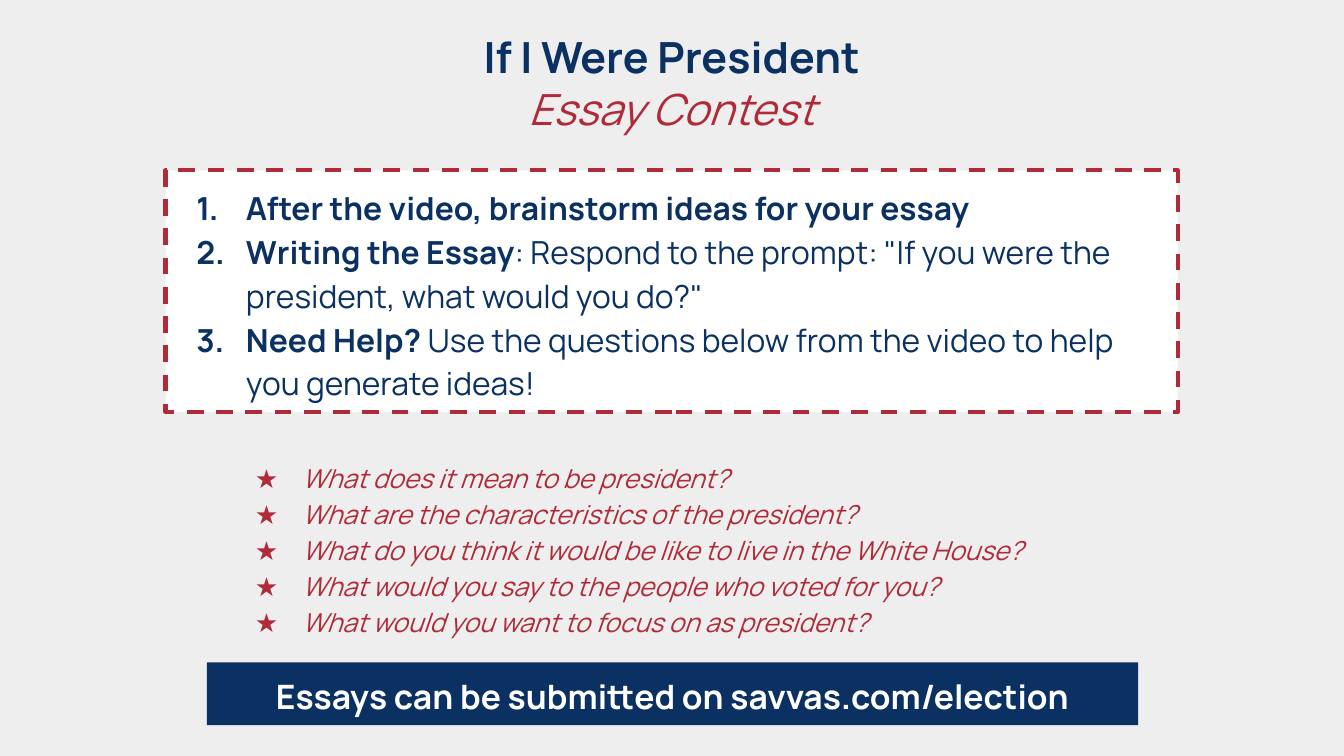
"""Build the essay contest slide."""
from lxml import etree
from pptx import Presentation
from pptx import util as u
from pptx.dml.color import RGBColor
from pptx.enum import dml, shapes, text
from pptx.oxml import ns

NAVY = RGBColor(0x0A, 0x31, 0x61)
RED = RGBColor(0xAF, 0x2B, 0x39)
WHITE = RGBColor(0xFF, 0xFF, 0xFF)
GREY = RGBColor(0xEE, 0xEE, 0xEE)
FONT = "Manrope"

TITLE = [
    [("If I Were President", NAVY, "b")],
    [("Essay Contest", RED, "i")],
]
STEPS = [
    [("After the video, brainstorm ideas for your essay", NAVY, "b")],
    [("Writing the Essay", NAVY, "b"),
     (': Respond to the prompt: "If you were the president, what would you do?"', NAVY, "")],
    [("Need Help?", NAVY, "b"),
     (" Use the questions below from the video to help you generate ideas!", NAVY, "")],
]
QUESTIONS = [[(question, RED, "i")] for question in (
    "What does it mean to be president?",
    "What are the characteristics of the president?",
    "What do you think it would be like to live in the White House?",
    "What would you say to the people who voted for you?",
    "What would you want to focus on as president?",
)]
SUBMIT = [[("Essays can be submitted on savvas.com/election", WHITE, "b")]]

NUMBER = ("buAutoNum", {"type": "arabicPeriod"}, NAVY, 0.94)
STAR = ("buChar", {"char": "★"}, RED, 0.89)


def add_bullet(p, bullet):
    tag, attrs, color, hang = bullet
    pPr = p._p.get_or_add_pPr()
    pPr.set("marL", str(u.Cm(1.27)))
    pPr.set("indent", str(-u.Cm(hang)))
    clr = etree.SubElement(pPr, ns.qn("a:buClr"))
    etree.SubElement(clr, ns.qn("a:srgbClr"), val=str(color))
    etree.SubElement(pPr, ns.qn("a:buFont"), typeface=FONT)
    etree.SubElement(pPr, ns.qn("a:" + tag), attrs)
    p.line_spacing = 1.15


def write(s, paragraphs, size, bullet=None):
    tf = s.text_frame
    tf.word_wrap = True
    tf.vertical_anchor = text.MSO_ANCHOR.TOP
    tf.margin_left = tf.margin_right = tf.margin_top = tf.margin_bottom = u.Cm(0.25)
    for i, runs in enumerate(paragraphs):
        p = tf.add_paragraph() if i else tf.paragraphs[0]
        p.alignment = text.PP_ALIGN.LEFT if bullet else text.PP_ALIGN.CENTER
        if bullet:
            add_bullet(p, bullet)
        for content, color, style in runs:
            r = p.add_run()
            r.text = content
            r.font.name = FONT
            r.font.size = u.Pt(size)
            r.font.bold = "b" in style
            r.font.italic = "i" in style
            r.font.color.rgb = color


def add_box(s_shapes, box, fill):
    s = s_shapes.add_shape(shapes.MSO_SHAPE.RECTANGLE, *map(u.Cm, box))
    s.shadow.inherit = False
    s.fill.solid()
    s.fill.fore_color.rgb = fill
    s.line.fill.background()
    return s


def main():
    prs = Presentation()
    prs.slide_width, prs.slide_height = u.Cm(25.4), u.Cm(14.29)
    slide = prs.slides.add_slide(prs.slide_layouts[6])
    slide.background.fill.solid()
    slide.background.fill.fore_color.rgb = GREY

    title = slide.shapes.add_textbox(*map(u.Cm, (2, 0.33, 21.4, 3.05)))
    write(title, TITLE, 23)

    steps = add_box(slide.shapes, (3.13, 3.22, 19.13, 4.57), WHITE)
    steps.line.color.rgb = RED
    steps.line.width = u.Pt(2.25)
    steps.line.dash_style = dml.MSO_LINE.DASH
    write(steps, STEPS, 17, NUMBER)

    questions = slide.shapes.add_textbox(*map(u.Cm, (4.19, 8.41, 17.02, 3.86)))
    write(questions, QUESTIONS, 14, STAR)

    banner = add_box(slide.shapes, (3.91, 12.52, 17.6, 1.19), NAVY)
    write(banner, SUBMIT, 18)

    prs.save("out.pptx")


if __name__ == "__main__":
    main()
